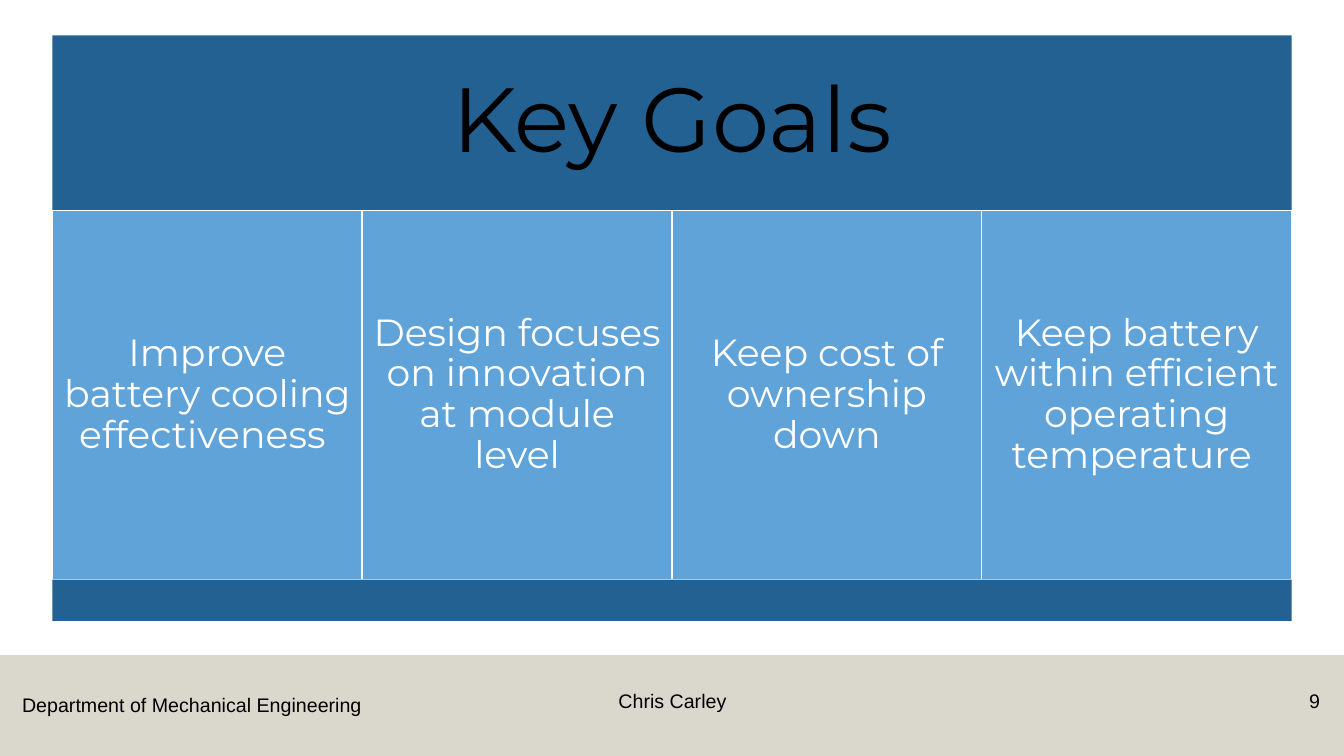
from lxml import etree
from pptx import Presentation
from pptx.dml.color import RGBColor
from pptx.enum.shapes import MSO_SHAPE
from pptx.enum.text import MSO_ANCHOR, MSO_AUTO_SIZE, PP_ALIGN
from pptx.oxml.ns import qn
from pptx.util import Inches, Pt

COLORS = {
    "banner": "236192",
    "goal": "60A3D9",
    "footer": "B7B09C",
    "white": "FFFFFF",
    "black": "000000",
}
GOALS = [
    "Improve battery cooling effectiveness ",
    "Design focuses on innovation at module level",
    "Keep cost of ownership down",
    "Keep battery within efficient operating temperature ",
]
LEFT, TOP, WIDTH = 0.52, 0.35, 12.29
BANNER_H, GOAL_H, BASE_H = 1.74, 3.66, 0.41
GOAL_TOP = TOP + BANNER_H
GOAL_W = WIDTH / len(GOALS)


def rgb(name):
    return RGBColor.from_string(COLORS[name])


def write(sp, text, size, font="Arial", color="black", align=PP_ALIGN.LEFT,
          anchor=MSO_ANCHOR.TOP, inset=None, spacing=None, wrap=True):
    tf = sp.text_frame
    tf.word_wrap = wrap
    tf.auto_size = MSO_AUTO_SIZE.NONE
    tf.vertical_anchor = anchor
    if inset is not None:
        tf.margin_left = tf.margin_right = Inches(inset)
        tf.margin_top = tf.margin_bottom = Inches(inset)
    p = tf.paragraphs[0]
    p.alignment = align
    p.line_spacing = spacing
    r = p.add_run()
    r.text = text
    r.font.name = font
    r.font.size = Pt(size)
    r.font.color.rgb = rgb(color)


def add_rect(left, top, width, height, color):
    sp = s.shapes.add_shape(MSO_SHAPE.RECTANGLE, Inches(left), Inches(top),
                            Inches(width), Inches(height))
    sp.shadow.inherit = False
    sp.fill.solid()
    sp.fill.fore_color.rgb = rgb(color)
    sp.line.fill.background()
    return sp


prs = Presentation()
prs.slide_width, prs.slide_height = Inches(13.33), Inches(7.5)
s = prs.slides.add_slide(prs.slide_layouts[5])

# Footer band, half transparent
band = add_rect(0, 6.5, 13.33, 1, "footer")
band_color = band.fill._xPr.find(qn("a:solidFill"))[0]
etree.SubElement(band_color, qn("a:alpha")).set("val", "50000")

footers = [
    ("Department of Mechanical Engineering", 0.12, 6.83, 3.59, 0.34, PP_ALIGN.LEFT, False),
    ("Chris Carley", 4.42, 6.79, 4.5, 0.4, PP_ALIGN.CENTER, True),
    ("9", 12.42, 6.79, 0.77, 0.4, PP_ALIGN.RIGHT, True),
]
for text, left, top, width, height, align, wrap in footers:
    box = s.shapes.add_textbox(Inches(left), Inches(top), Inches(width), Inches(height))
    write(box, text, 14, align=align, wrap=wrap)

# Title banner
title = s.shapes.title
title.left, title.top = Inches(LEFT), Inches(TOP)
title.width, title.height = Inches(WIDTH), Inches(BANNER_H)
title.fill.solid()
title.fill.fore_color.rgb = rgb("banner")
write(title, "Key Goals", 65, font="Montserrat", align=PP_ALIGN.CENTER,
      anchor=MSO_ANCHOR.MIDDLE, inset=0.27, spacing=0.9)

# One column per goal
for i, goal in enumerate(GOALS):
    cell = add_rect(LEFT + i * GOAL_W, GOAL_TOP, GOAL_W, GOAL_H, "goal")
    cell.line.color.rgb = rgb("white")
    cell.line.width = Pt(1)
    write(cell, goal, 27, font="Montserrat", color="white", align=PP_ALIGN.CENTER,
          anchor=MSO_ANCHOR.MIDDLE, inset=0.11, spacing=0.9)

add_rect(LEFT, GOAL_TOP + GOAL_H, WIDTH, BASE_H, "banner")

prs.save("out.pptx")
